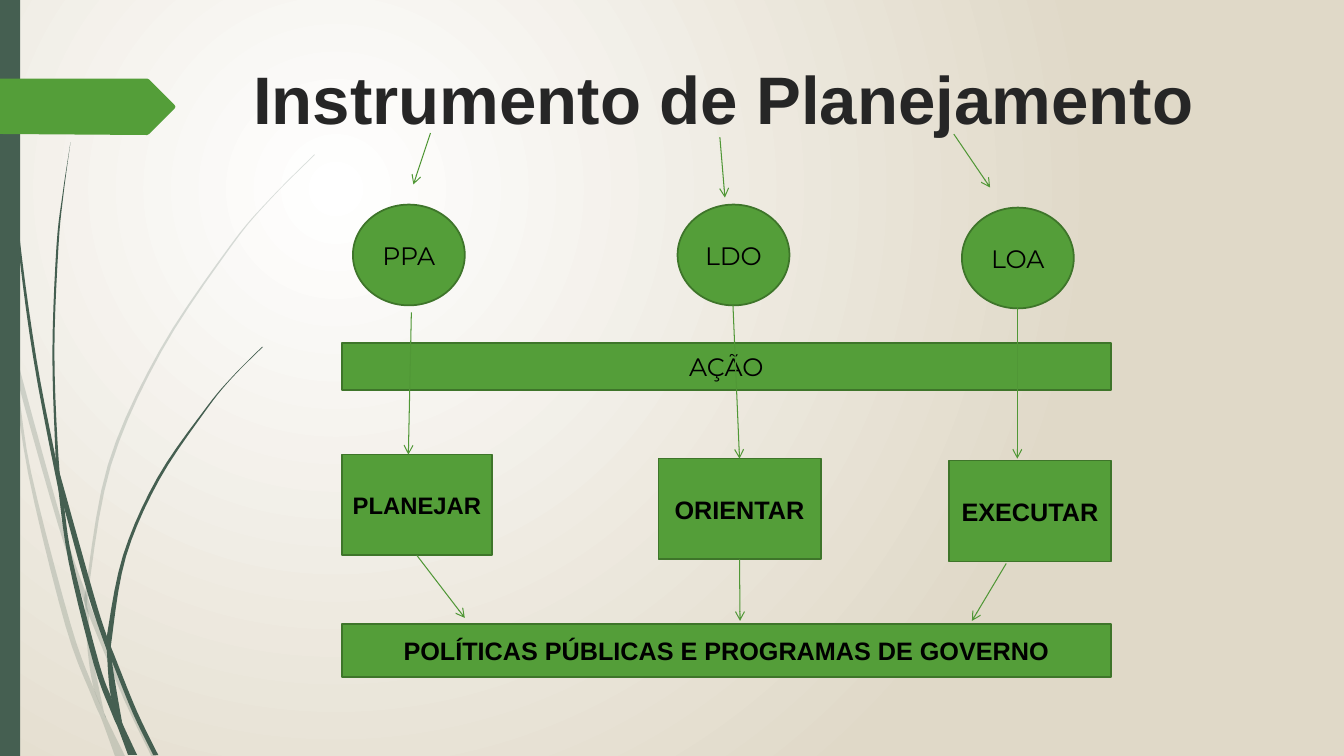
"""Builds the planning instruments slide."""
from dataclasses import dataclass

from lxml import etree
from pptx import Presentation
from pptx import util as u
from pptx.dml.color import RGBColor
from pptx.enum import shapes, text
from pptx.oxml import parse_xml
from pptx.oxml.ns import nsdecls, qn

Point = tuple[int, int]
PX = 9144
GREEN, EDGE, ARROW, SPRUCE = "549E39", "3E752A", "509736", "455F51"
BLACK, TITLE_GREY = "000000", "262626"
CURVE_STEPS = 5


@dataclass(frozen=True)
class Blade:
    left: list[Point]
    right: list[Point]
    opacity: int = 100


@dataclass(frozen=True)
class Node:
    label: str
    left: int
    top: int
    width: int
    height: int
    font: str = "Arial"
    size: int = 18
    bold: bool = True
    kind: shapes.MSO_SHAPE = shapes.MSO_SHAPE.RECTANGLE


@dataclass(frozen=True)
class Arrow:
    start: Point
    end: Point
    source: str = ""
    target: str = ""


def circle(label: str, left: int, top: int) -> Node:
    return Node(label, left, top, 111, 100, "Montserrat", bold=False, kind=shapes.MSO_SHAPE.OVAL)


BLADES = [
    Blade([(0, 299), (17, 376), (58, 522), (84, 599), (88, 610), (123, 694), (150, 750)],
          [(0, 282), (14, 345), (62, 520), (88, 596), (92, 607), (127, 692), (155, 750)], 20),
    Blade([(11, 350), (28, 470), (65, 621), (92, 693), (101, 714), (114, 750)],
          [(11, 350), (17, 376), (31, 469), (70, 619), (93, 683), (105, 711), (124, 750)], 20),
    Blade([(312, 153), (268, 197), (228, 244), (158, 348), (107, 461), (85, 584), (84, 599),
           (87, 646), (93, 683), (105, 711)],
          [(312, 154), (268, 198), (229, 245), (160, 349), (110, 462), (88, 584), (88, 610),
           (91, 646), (103, 706), (105, 711)], 20),
    Blade([(3, 0), (7, 110), (17, 233), (33, 355), (57, 481), (64, 505), (88, 592),
           (106, 645), (111, 656), (132, 708), (152, 749)],
          [(4, 0), (8, 109), (19, 232), (36, 355), (55, 453), (60, 472), (93, 590),
           (106, 631), (113, 649), (136, 706), (157, 749)]),
    Blade([(70, 141), (62, 193), (56, 245), (52, 349), (55, 449), (57, 477), (68, 557),
           (93, 659), (111, 708), (117, 722), (127, 749)],
          [(70, 141), (63, 193), (58, 245), (54, 349), (58, 453), (64, 505), (72, 556),
           (98, 657), (110, 691), (122, 719), (136, 749)]),
    Blade([(260, 344), (231, 373), (204, 405), (156, 474), (122, 551), (106, 631), (106, 645),
           (110, 691), (122, 719)],
          [(261, 344), (231, 374), (205, 406), (158, 476), (125, 552), (111, 633), (111, 656),
           (121, 716), (122, 719)]),
]
TAG = [(0, 78), (146, 78), (148, 79), (173, 104), (174, 106), (173, 108), (148, 133),
       (146, 134), (0, 133)]
NODES = [
    circle("PPA", 350, 203),
    circle("LDO", 672, 203),
    circle("LOA", 954, 206),
    Node("AÇÃO", 339, 340, 763, 47, "Montserrat", bold=False),
    Node("PLANEJAR", 339, 451, 149, 100, size=17),
    Node("ORIENTAR", 653, 455, 161, 100),
    Node("EXECUTAR", 941, 457, 161, 100),
    Node("POLÍTICAS PÚBLICAS E PROGRAMAS DE GOVERNO", 339, 619, 763, 53),
]
ARROWS = [
    Arrow((427, 132), (410, 183)),
    Arrow((714, 136), (719, 196)),
    Arrow((946, 133), (982, 186)),
    Arrow((408, 310), (405, 451)),
    Arrow((727, 303), (734, 455), target="ORIENTAR"),
    Arrow((1009, 306), (1009, 455)),
    Arrow((414, 551), (461, 613), source="PLANEJAR"),
    Arrow((734, 555), (734, 616), source="ORIENTAR"),
    Arrow((998, 559), (964, 616)),
]


def px(length: float) -> int:
    return round(length * PX)


def rgb(colour: str) -> RGBColor:
    return RGBColor.from_string(colour)


def smooth(knots: list[Point]) -> list[tuple[float, float]]:
    padded = [knots[0], *knots, knots[-1]]
    curve = []
    for a, b, c, d in zip(padded, padded[1:], padded[2:], padded[3:]):
        for step in range(CURVE_STEPS):
            t = step / CURVE_STEPS
            curve.append(tuple(
                q + t * (r - p) / 2 + t**2 * (2 * p - 5 * q + 4 * r - s) / 2
                + t**3 * (3 * q - p - 3 * r + s) / 2
                for p, q, r, s in zip(a, b, c, d)))
    return [*curve, knots[-1]]


def paint(shape, colour: str, opacity: int = 100) -> None:
    shape.shadow.inherit = False
    shape.fill.solid()
    shape.fill.fore_color.rgb = rgb(colour)
    shape.line.fill.background()
    if opacity < 100:
        swatch = shape.element.spPr.find(qn("a:solidFill")).find(qn("a:srgbClr"))
        etree.SubElement(swatch, qn("a:alpha"), val=str(opacity * 1000))


def draw_outline(page, points: list, colour: str, opacity: int = 100) -> None:
    corners = [(px(x), px(y)) for x, y in points]
    builder = page.shapes.build_freeform(*corners[0])
    builder.add_line_segments(corners[1:], close=True)
    paint(builder.convert_to_shape(), colour, opacity)


def draw_background(page) -> None:
    page.element.cSld.insert(0, parse_xml(
        f'<p:bg {nsdecls("p", "a")}><p:bgPr><a:gradFill rotWithShape="1"><a:gsLst>'
        '<a:gs pos="0"><a:srgbClr val="FFFFFF"/></a:gs>'
        '<a:gs pos="100000"><a:srgbClr val="E0D9C8"/></a:gs></a:gsLst>'
        '<a:path path="circle"><a:fillToRect l="50000" t="50000" r="100000" b="100000"/>'
        '</a:path></a:gradFill><a:effectLst/></p:bgPr></p:bg>'))


def draw_title(page) -> None:
    title = page.shapes.title
    title.left, title.top, title.width, title.height = map(px, (241, 52, 1040, 144))
    frame = title.text_frame
    frame.text = "Instrumento de Planejamento"
    frame.auto_size = text.MSO_AUTO_SIZE.NONE
    frame.vertical_anchor = text.MSO_ANCHOR.TOP
    para = frame.paragraphs[0]
    para.alignment = text.PP_ALIGN.LEFT
    style_font(para.font, "Arial", 48, True, TITLE_GREY)


def style_font(font, name: str, size: int, bold: bool, colour: str) -> None:
    font.name, font.size, font.bold = name, u.Pt(size), bold
    font.color.rgb = rgb(colour)


def draw_node(page, node: Node):
    box = page.shapes.add_shape(
        node.kind, *map(px, (node.left, node.top, node.width, node.height)))
    paint(box, GREEN)
    box.line.color.rgb = rgb(EDGE)
    box.line.width = u.Pt(1.25)
    frame = box.text_frame
    frame.text = node.label
    frame.word_wrap = True
    frame.vertical_anchor = text.MSO_ANCHOR.MIDDLE
    para = frame.paragraphs[0]
    para.alignment = text.PP_ALIGN.CENTER
    style_font(para.font, node.font, node.size, node.bold, BLACK)
    return box


def draw_arrow(page, arrow: Arrow, boxes: dict) -> None:
    line = page.shapes.add_connector(
        shapes.MSO_CONNECTOR.STRAIGHT, *map(px, (*arrow.start, *arrow.end)))
    if arrow.source:
        line.begin_connect(boxes[arrow.source], 2)
    if arrow.target:
        line.end_connect(boxes[arrow.target], 0)
    line.line.color.rgb = rgb(ARROW)
    line.line.width = u.Pt(0.75)
    properties = line.element.spPr
    etree.SubElement(properties.find(qn("a:ln")), qn("a:tailEnd"), type="arrow")
    etree.SubElement(properties, qn("a:effectLst"))


def main() -> None:
    deck = Presentation()
    deck.slide_width, deck.slide_height = px(1333), px(750)
    page = deck.slides.add_slide(deck.slide_layouts[5])
    draw_background(page)
    for blade in BLADES:
        outline = smooth(blade.left) + smooth(blade.right)[::-1]
        draw_outline(page, outline, SPRUCE, blade.opacity)
    bar = page.shapes.add_shape(shapes.MSO_SHAPE.RECTANGLE, 0, 0, px(20), px(750))
    paint(bar, SPRUCE)
    draw_outline(page, TAG, GREEN)
    draw_title(page)
    boxes = {node.label: draw_node(page, node) for node in NODES}
    for arrow in ARROWS:
        draw_arrow(page, arrow, boxes)
    deck.save("out.pptx")


if __name__ == "__main__":
    main()
